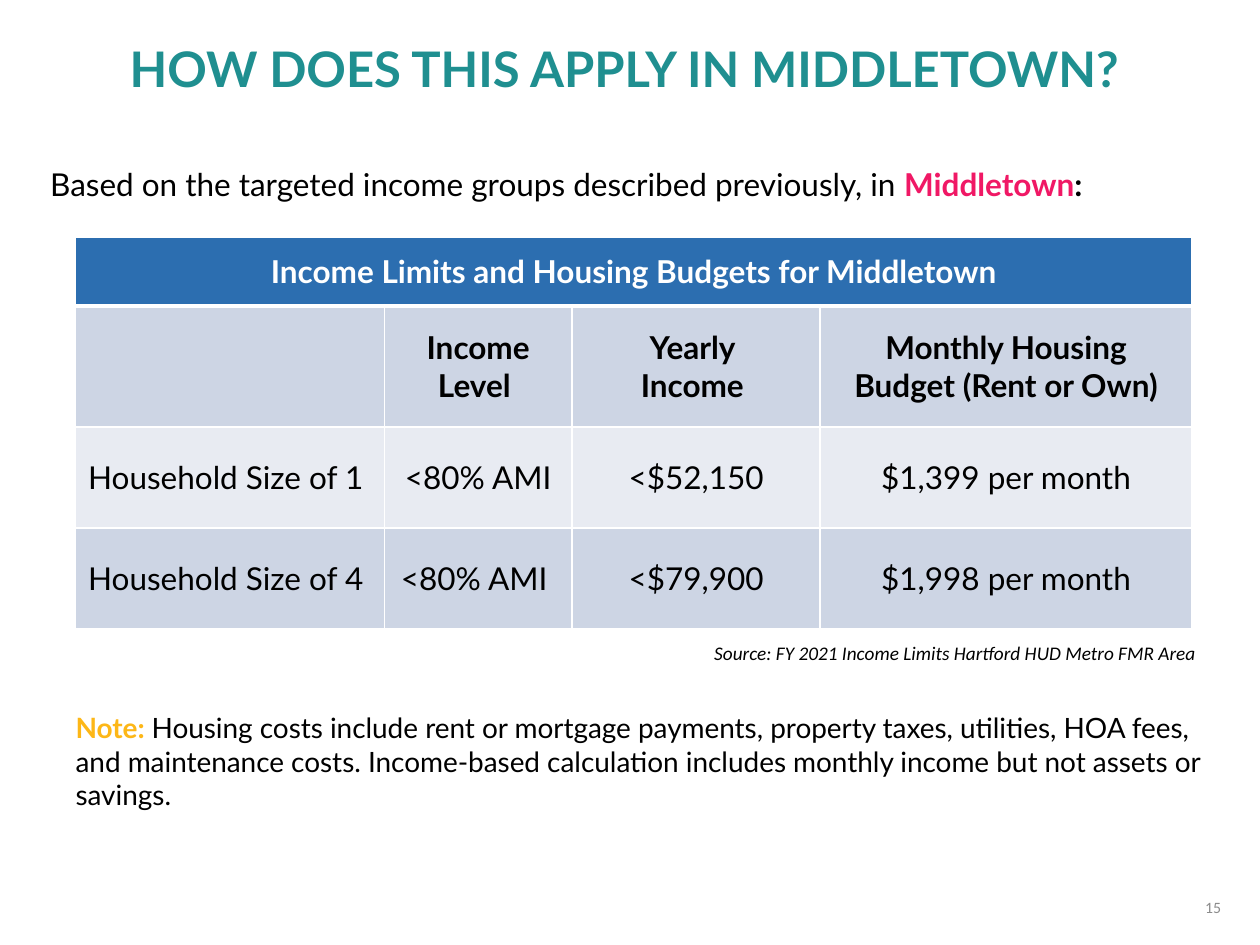
"""Build the Middletown housing budget slide."""
import pptx
import pptx.util
import pptx.dml.color
import pptx.enum.text
import pptx.oxml
from pptx.oxml.ns import nsdecls

Pt = pptx.util.Pt
ALIGN = pptx.enum.text.PP_ALIGN
MID = pptx.enum.text.MSO_ANCHOR.MIDDLE
TOP = pptx.enum.text.MSO_ANCHOR.TOP

BLACK, WHITE, BLUE = "000000", "FFFFFF", "2C6EB0"
DARK, LIGHT = "CDD5E4", "E8EBF2"

BOXES = [
    dict(at=(0, 18.72, 720, 41), font="Lato", size=28, align=ALIGN.CENTER,
         runs=[("HOW DOES THIS APPLY IN MIDDLETOWN? ", "1F8F90", True)]),
    dict(at=(21.6, 91, 683.28, 29), font="Lato", size=18,
         runs=[("Based on the targeted income groups described previously, in ", BLACK, False),
               ("Middletown", "F01865", True), (":", BLACK, True)]),
    dict(at=(544.32, 504, 160.56, 28.8), font="Calibri", size=9,
         align=ALIGN.RIGHT, anchor=MID, runs=[("15", "8C8C8C", False)]),
    dict(at=(401.04, 362.88, 318.96, 20.88), font="Calibri", size=11, slant=True,
         runs=[("Source: FY 2021 Income Limits Hartford HUD Metro FMR Area", BLACK, False)]),
    dict(at=(0, 402.48, 699.12, 65.52), font="Lato", size=16, indent=36,
         runs=[("Note: ", "FDB717", True),
               ("Housing costs include rent or mortgage payments, property taxes, utilities, "
                "HOA fees, and maintenance costs. Income-based calculation includes monthly "
                "income but not assets or savings.", BLACK, False)]),
]

COLS = [176.4, 107.28, 141.84, 212.4]
ROWS = [39.6, 69.12, 57.6, 57.6]
TABLE = [
    ["Income Limits and Housing Budgets for Middletown", "", "", ""],
    ["", "Income Level ", "Yearly \nIncome ", "Monthly Housing Budget (Rent or Own)"],
    ["Household Size of 1", "<80% AMI", "<$52,150", "$1,399 per month"],
    ["Household Size of 4", "<80% AMI ", "<$79,900", "$1,998 per month"],
]
FILLS = [BLUE, DARK, LIGHT, DARK]


def paint(hue):
    return pptx.dml.color.RGBColor.from_string(hue)


def write(para, runs, font, size, slant=False):
    for text, hue, bold in runs:
        run = para.add_run()
        run.text = text
        run.font.name, run.font.size = font, Pt(size)
        run.font.bold, run.font.italic = bold, slant
        run.font.color.rgb = paint(hue)


def add_box(slide, at, font, size, runs, align=ALIGN.LEFT, anchor=TOP, slant=False, indent=0):
    frame = slide.shapes.add_textbox(*map(Pt, at)).text_frame
    frame.word_wrap = True
    frame.vertical_anchor = anchor
    frame.margin_left = Pt(7.2 + indent)
    para = frame.paragraphs[0]
    para.alignment = align
    write(para, runs, font, size, slant)


def add_edges(cell, base):
    props = cell._tc.get_or_add_tcPr()
    for spot, side in enumerate("LRTB"):
        width = int(Pt(base if side == "B" else 1))
        props.insert(spot, pptx.oxml.parse_xml(
            f'<a:ln{side} {nsdecls("a")} w="{width}"><a:solidFill>'
            f'<a:srgbClr val="{WHITE}"/></a:solidFill></a:ln{side}>'))


def add_grid(slide):
    table = slide.shapes.add_table(len(ROWS), len(COLS), Pt(43.2), Pt(135.36),
                                   Pt(sum(COLS)), Pt(sum(ROWS))).table
    for col, width in zip(table.columns, COLS):
        col.width = Pt(width)
    for r, texts in enumerate(TABLE):
        table.rows[r].height = Pt(ROWS[r])
        for c, text in enumerate(texts):
            cell = table.cell(r, c)
            cell.vertical_anchor = MID
            cell.fill.solid()
            cell.fill.fore_color.rgb = paint(FILLS[r])
            add_edges(cell, 3 if r == 0 else 1)
            for n, line in enumerate(text.split("\n") if text else []):
                frame = cell.text_frame
                para = frame.add_paragraph() if n else frame.paragraphs[0]
                para.alignment = ALIGN.LEFT if r > 1 and c == 0 else ALIGN.CENTER
                write(para, [(line, BLACK if r else WHITE, r < 2)], "Lato", 18)
    table.cell(0, 0).merge(table.cell(0, len(COLS) - 1))


def main():
    deck = pptx.Presentation()
    deck.slide_width, deck.slide_height = Pt(720), Pt(540)
    slide = deck.slides.add_slide(deck.slide_layouts[6])
    for box in BOXES[:-1]:
        add_box(slide, **box)
    add_grid(slide)
    add_box(slide, **BOXES[-1])
    deck.save("out.pptx")


if __name__ == "__main__":
    main()
